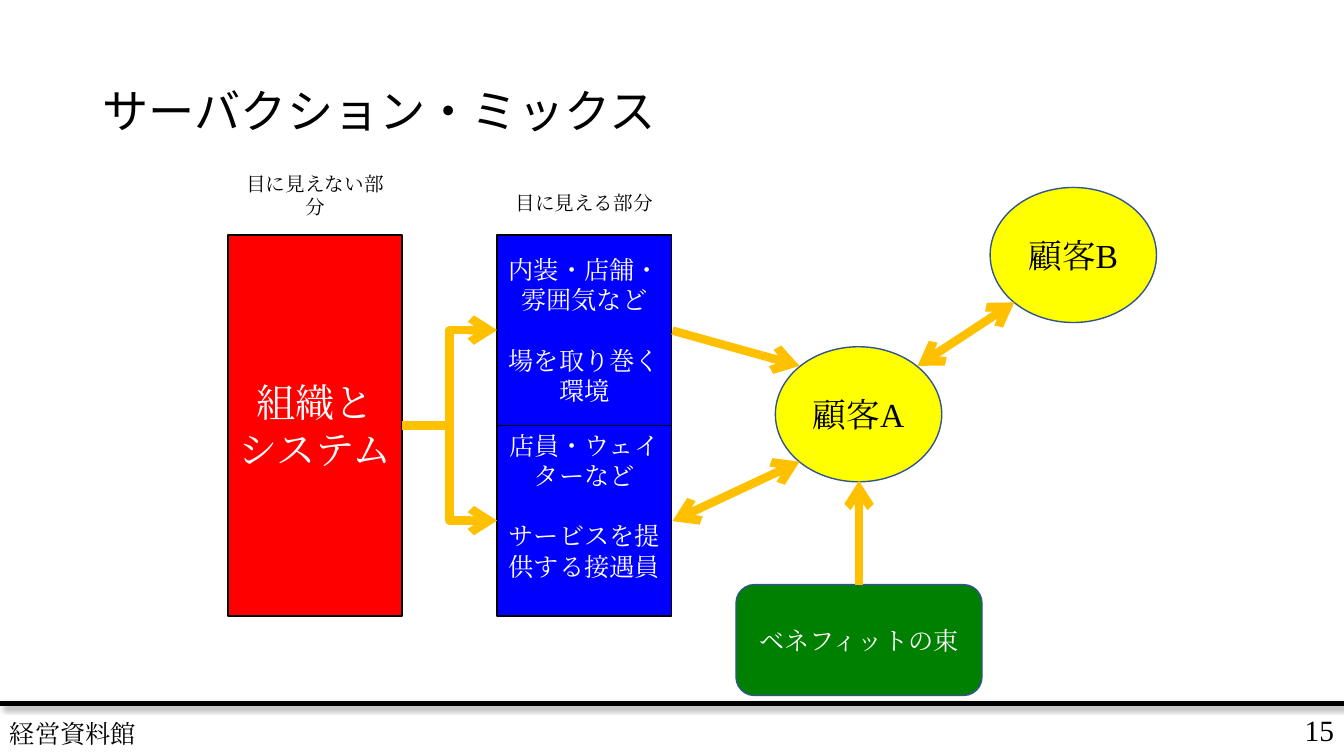
import pptx
import pptx.dml.color
import pptx.enum.lang
import pptx.enum.shapes
import pptx.enum.text
import pptx.oxml
import pptx.oxml.ns
import pptx.util
from lxml import etree

Inches = pptx.util.Inches
Pt = pptx.util.Pt
RGBColor = pptx.dml.color.RGBColor
Shape = pptx.enum.shapes.MSO_SHAPE
Link = pptx.enum.shapes.MSO_CONNECTOR
Align = pptx.enum.text.PP_ALIGN
qn = pptx.oxml.ns.qn

BLACK = RGBColor(0, 0, 0)
WHITE = RGBColor(255, 255, 255)
RED = RGBColor(255, 0, 0)
BLUE = RGBColor(0, 0, 255)
YELLOW = RGBColor(255, 255, 0)
GREEN = RGBColor(0, 128, 0)
NAVY = RGBColor(0x32, 0x54, 0x91)
AMBER = RGBColor(255, 0xC0, 0)

SERIF = "Times New Roman"
SANS = "Noto Sans CJK JP"
SHADOW = (
    '<a:outerShdw xmlns:a="http://schemas.openxmlformats.org/drawingml/2006/main" '
    'blurRad="50800" dist="38100" dir="2700000" algn="tl" rotWithShape="0">'
    '<a:srgbClr val="000000"><a:alpha val="40000"/></a:srgbClr></a:outerShdw>'
)


def add_shadow(properties):
    """Give a shape or a run a soft shadow to the lower right."""
    effects = etree.SubElement(properties, qn("a:effectLst"))
    effects.append(pptx.oxml.parse_xml(SHADOW))


def write(shape, lines, size, color, align=Align.CENTER, font=SERIF, gap=0):
    """Fill a shape with vertically centred paragraphs, gap points apart."""
    frame = shape.text_frame
    frame.word_wrap = True
    frame.vertical_anchor = pptx.enum.text.MSO_ANCHOR.MIDDLE
    for index, line in enumerate(lines):
        para = frame.add_paragraph() if index else frame.paragraphs[0]
        para.alignment = align
        if index and gap:
            para.space_before = Pt(gap)
        span = para.add_run()
        span.text = line
        span.font.size = Pt(size)
        span.font.name = font
        span.font.color.rgb = color
        span.font.language_id = pptx.enum.lang.MSO_LANGUAGE_ID.JAPANESE
        properties = span.font._element
        etree.SubElement(properties, qn("a:ea")).set("typeface", font)


def add_label(page, place, text, size, align=Align.CENTER, font=SERIF):
    """Add a one-paragraph black text box."""
    box = page.shapes.add_textbox(*map(Inches, place))
    write(box, [text], size, BLACK, align, font)
    return box


def add_node(page, kind, place, lines, size, fill, border, color=WHITE, gap=0):
    """Add a filled preset shape with text."""
    node = page.shapes.add_shape(kind, *map(Inches, place))
    node.shadow.inherit = False
    node.fill.solid()
    node.fill.fore_color.rgb = fill
    node.line.color.rgb = border
    node.line.width = Pt(1)
    write(node, lines, size, color, gap=gap)
    return node


def add_line(page, start, end, color, width, kind=Link.STRAIGHT, ends=()):
    """Add a connector with open arrowheads at the named ends."""
    line = page.shapes.add_connector(kind, *map(Inches, start + end))
    line.line.color.rgb = color
    line.line.width = Pt(width)
    outline = line.line._get_or_add_ln()
    for name in ends:
        etree.SubElement(outline, qn("a:" + name)).set("type", "arrow")
    return line


def add_footer(page):
    """Add the shadowed rule, the footer name and the page number."""
    rule = add_line(page, (0, 6.98), (13.33, 6.98), BLACK, 3)
    add_shadow(rule._element.spPr)
    number = add_label(page, (11.55, 6.98, 1.78, 0.51), "15", 21, Align.RIGHT)
    name = add_label(page, (0, 7.05, 3.6, 0.45), "経営資料館", 18, Align.LEFT)
    for box in (number, name):
        properties = box.text_frame.paragraphs[0].runs[0].font._element
        add_shadow(properties)
        properties.insert(1, properties[-1])


def main():
    """Build the servuction mix slide."""
    deck = pptx.Presentation()
    deck.slide_width, deck.slide_height = Inches(13.33), Inches(7.5)
    page = deck.slides.add_slide(deck.slide_layouts[6])
    add_footer(page)
    title = add_label(page, (0.92, 0.4, 11.5, 1.45), "サーバクション・ミックス", 33, Align.LEFT, SANS)
    title.text_frame.paragraphs[0].line_spacing = 0.9

    hidden, visible, width, top, half = 2.26, 4.93, 1.73, 2.33, 1.89
    for left, y, text in ((hidden, 1.7, "目に見えない部分"), (visible, 1.78, "目に見える部分")):
        add_label(page, (left, y, width, 0.47), text, 14)
    add_node(page, Shape.RECTANGLE, (hidden, top, width, 2 * half),
             ["組織と", "システム"], 28, RED, BLACK)
    parts = (
        (["内装・店舗・雰囲気など", "場を取り巻く環境"], 0.05),
        (["店員・ウェイターなど", "サービスを提供する接遇員"], 0.35),
    )
    for row, (lines, bottom) in enumerate(parts):
        y = top + row * half
        part = add_node(page, Shape.RECTANGLE, (visible, y, width, half),
                        lines, 18, BLUE, BLACK, gap=21.6)
        part.text_frame.margin_bottom = Inches(bottom)
        add_line(page, (hidden + width, top + half), (visible, y + half / 2),
                 AMBER, 6, Link.ELBOW, ["tailEnd"])

    for text, left, y in (("顧客A", 7.69, 3.44), ("顧客B", 9.82, 1.86)):
        add_node(page, Shape.OVAL, (left, y, 1.65, 1.34), [text], 24, YELLOW, NAVY, BLACK)
    add_node(page, Shape.ROUNDED_RECTANGLE, (7.3, 5.8, 2.44, 1.1),
             ["ベネフィットの束"], 18, GREEN, NAVY)

    both = ["headEnd", "tailEnd"]
    arrows = (
        ((6.67, 3.28), (7.93, 3.63), both[1:]),
        ((6.67, 5.17), (7.93, 4.58), both),
        ((10.06, 3), (9.1, 3.63), both),
        ((8.52, 5.8), (8.52, 4.77), both[1:]),
    )
    for start, end, ends in arrows:
        add_line(page, start, end, AMBER, 6, ends=ends)
    for shape in page.shapes:
        if shape.shape_type == pptx.enum.shapes.MSO_SHAPE_TYPE.LINE:
            properties = shape._element.spPr
            if properties.find(qn("a:effectLst")) is None:
                etree.SubElement(properties, qn("a:effectLst"))
    deck.save("out.pptx")


if __name__ == "__main__":
    main()
